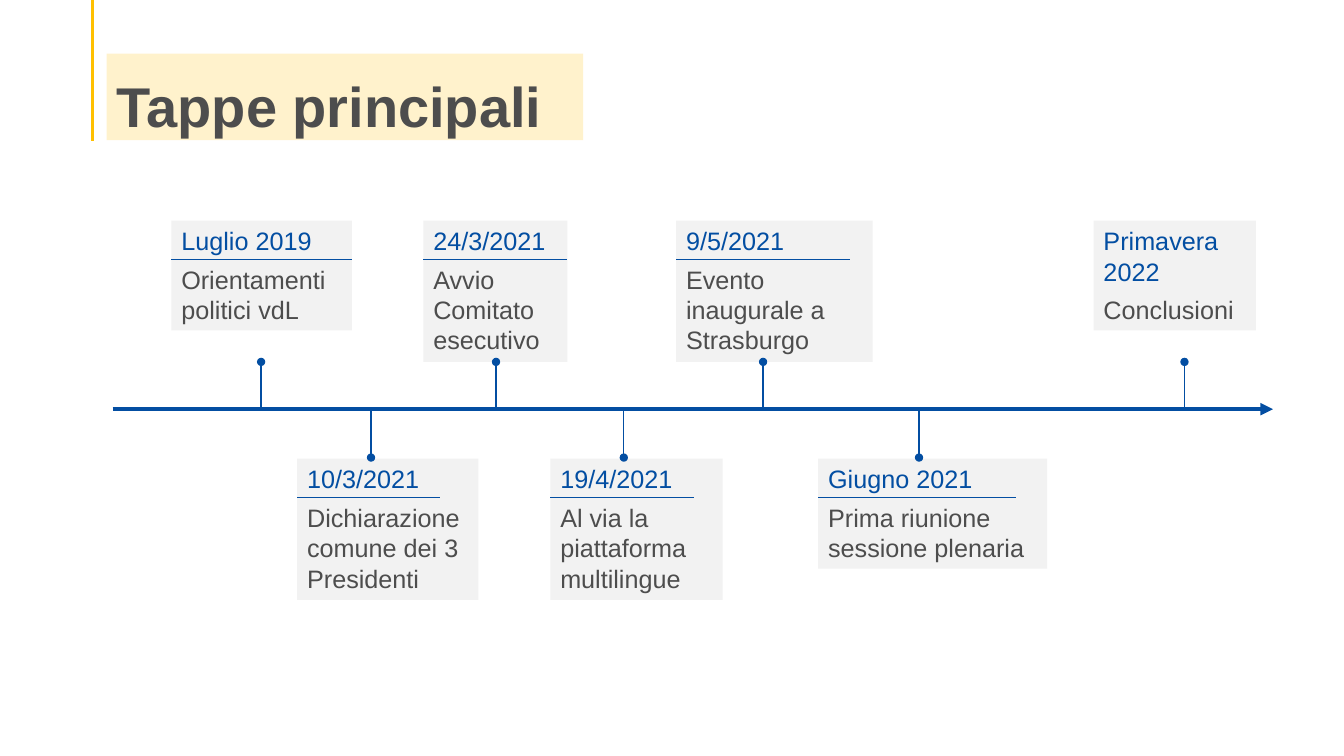
from dataclasses import dataclass

from lxml.etree import SubElement as Sub
from pptx import Presentation
from pptx.dml.color import RGBColor as Rgb
from pptx.enum.shapes import MSO_CONNECTOR as Link
from pptx.enum.text import MSO_ANCHOR as Anchor, MSO_AUTO_SIZE as Auto
from pptx.oxml.ns import qn
from pptx.shapes.autoshape import Shape
from pptx.shapes.shapetree import GroupShapes, SlideShapes
from pptx.text.text import TextFrame
from pptx.util import Cm, Pt

Tree = SlideShapes | GroupShapes


@dataclass(frozen=True)
class Theme:
    font: str = "Arial"
    blue: str = "034EA2"
    grey: str = "4D4D4D"
    pale: str = "F2F2F2"
    gold: str = "FFC000"
    cream: str = "FFF2CC"
    head: int = 40
    body: int = 18


@dataclass(frozen=True)
class Step:
    date: str
    note: str
    left: float
    width: float
    tall: float
    rule: float
    stem: float
    above: bool


THEME = Theme()
AXIS = 10.31
LOW, HIGH = 2.77, 3.56
STEPS = [
    Step("Luglio 2019", "Orientamenti politici vdL", 4.32, 4.55, LOW, 4.55, 6.58, True),
    Step("10/3/2021", "Dichiarazione comune dei 3 Presidenti", 7.49, 4.57, HIGH, 3.61, 9.35, False),
    Step("24/3/2021", "Avvio Comitato esecutivo", 10.67, 3.63, HIGH, 3.63, 12.5, True),
    Step("19/4/2021", "Al via la piattaforma multilingue", 13.87, 4.34, HIGH, 3.61, 15.72, False),
    Step("9/5/2021", "Evento inaugurale a Strasburgo", 17.04, 4.95, HIGH, 4.39, 19.23, True),
    Step("Giugno 2021", "Prima riunione\nsessione plenaria", 20.62, 5.77, LOW, 4.98, 23.16, False),
    Step("Primavera 2022", "Conclusioni", 27.56, 4.09, LOW, 0, 29.85, True),
]


def add_box(tree: Tree, left: float, top: float, width: float, tall: float, fill: str) -> Shape:
    box = tree.add_textbox(Cm(left), Cm(top), Cm(width), Cm(tall))
    box.fill.solid()
    box.fill.fore_color.rgb = Rgb.from_string(fill)
    box.text_frame.word_wrap = True
    return box


def add_text(frame: TextFrame, text: str, *, color: str, size: int = THEME.body,
             bold: bool = False, first: bool = False, after: int = 0,
             pitch: float = 1.0) -> None:
    para = frame.paragraphs[0] if first else frame.add_paragraph()
    para.space_after = Pt(after)
    para.line_spacing = pitch
    run = para.add_run()
    run.text = text
    run.font.name = THEME.font
    run.font.size = Pt(size)
    run.font.bold = bold
    run.font.color.rgb = Rgb.from_string(color)


def add_line(tree: Tree, x1: float, y1: float, x2: float, y2: float, *,
             color: str = THEME.blue, width: float = 0.75, tip: str = "") -> None:
    line = tree.add_connector(Link.STRAIGHT, Cm(x1), Cm(y1), Cm(x2), Cm(y2))
    line.line.color.rgb = Rgb.from_string(color)
    line.line.width = Pt(width)
    props = line._element.spPr
    if tip:
        Sub(props.find(qn("a:ln")), qn("a:tailEnd"), type=tip)
    Sub(props, qn("a:effectLst"))


def add_step(tree: Tree, step: Step) -> None:
    group = tree.add_group_shape().shapes
    top, dot = (5.56, 9.12) if step.above else (11.56, 11.53)
    box = add_box(group, step.left, top, step.width, step.tall, THEME.pale)
    frame = box.text_frame
    frame.auto_size = Auto.SHAPE_TO_FIT_TEXT
    add_text(frame, step.date, color=THEME.blue, first=True, after=6)
    for part in step.note.split("\n"):
        add_text(frame, part, color=THEME.grey)
    if step.rule:
        level = top + 0.97
        add_line(group, step.left, level, step.left + step.rule, level)
    add_line(group, step.stem, AXIS, step.stem, dot, width=1, tip="oval")


def add_title(tree: Tree, text: str) -> None:
    add_line(tree, 2.34, 0, 2.34, 3.56, color=THEME.gold, width=2.25)
    frame = add_box(tree, 2.69, 1.35, 12.01, 2.18, THEME.cream).text_frame
    frame.vertical_anchor = Anchor.BOTTOM
    frame.margin_bottom = 0
    add_text(frame, text, color=THEME.grey, size=THEME.head, bold=True, first=True, pitch=0.9)


def main() -> None:
    deck = Presentation()
    deck.slide_width, deck.slide_height = Cm(33.87), Cm(19.05)
    tree = deck.slides.add_slide(deck.slide_layouts[6]).shapes
    add_title(tree, "Tappe principali")
    add_line(tree, 2.84, AXIS, 32.08, AXIS, width=3, tip="triangle")
    for step in STEPS:
        add_step(tree, step)
    deck.save("out.pptx")


if __name__ == "__main__":
    main()
